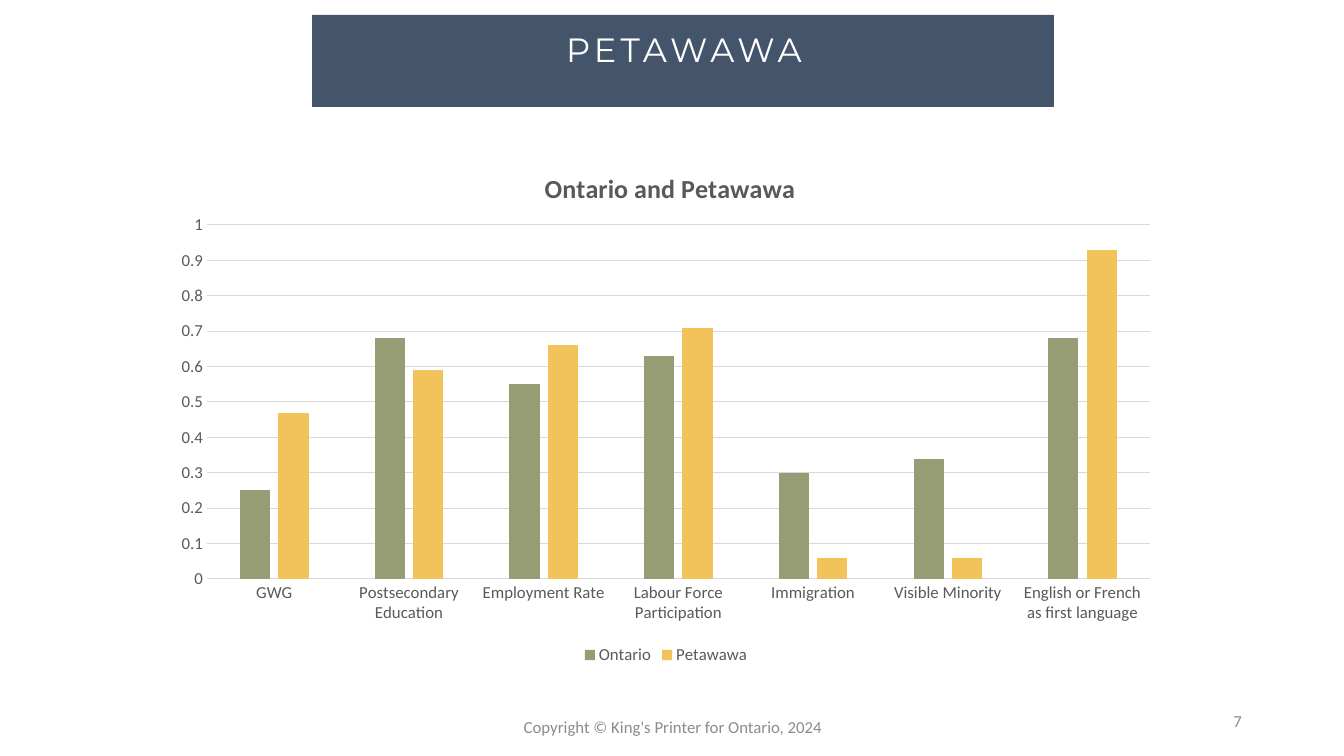
import pptx
import pptx.util
import pptx.chart.data
import pptx.dml.color
import pptx.enum.chart
import pptx.enum.shapes
import pptx.enum.text
import pptx.oxml

COLORS = {
    "banner": "44546A",
    "white": "FFFFFF",
    "footer": "8C8C8C",
    "label": "595959",
    "grid": "D9D9D9",
    "ontario": "969C74",
    "petawawa": "F3C35B",
}
ALIGN = pptx.enum.text.PP_ALIGN
ANCHOR = pptx.enum.text.MSO_ANCHOR


def px(*lengths):
    return [round(length * 914400 / 100.8) for length in lengths]


def style_font(font, size, color, name="Calibri", bold=False):
    font.size = pptx.util.Pt(size)
    font.name = name
    font.bold = bold
    font.color.rgb = pptx.dml.color.RGBColor.from_string(COLORS[color])


deck = pptx.Presentation()
deck.slide_width, deck.slide_height = px(1344, 756)
page = deck.slides.add_slide(deck.slide_layouts[6])

banner = page.shapes.add_shape(
    pptx.enum.shapes.MSO_SHAPE.RECTANGLE, *px(312, 15, 742, 92))
banner.shadow.inherit = False
banner.fill.solid()
banner.fill.fore_color.rgb = pptx.dml.color.RGBColor.from_string(COLORS["banner"])
banner.line.fill.background()

texts = [
    ("PETAWAWA", (339, 29, 690, 40), 24, "white", "Montserrat", ALIGN.CENTER, ANCHOR.TOP, 0, 300),
    ("Copyright © King's Printer for Ontario, 2024", (446, 707, 454, 40), 12, "footer",
     "Calibri", ALIGN.CENTER, ANCHOR.MIDDLE, 10, 0),
    ("7", (950, 701, 302, 40), 12, "footer", "Calibri", ALIGN.RIGHT, ANCHOR.MIDDLE, 10, 0),
]
for text, place, size, color, font_name, align, anchor, inset, spacing in texts:
    frame = page.shapes.add_textbox(*px(*place)).text_frame
    frame.word_wrap = True
    frame.vertical_anchor = anchor
    frame.margin_left, frame.margin_right = px(inset, inset)
    frame.margin_top, frame.margin_bottom = px(inset // 2, inset // 2)
    para = frame.paragraphs[0]
    para.alignment = align
    span = para.add_run()
    span.text = text
    style_font(span.font, size, color, font_name)
    if spacing:
        span.font._element.set("spc", str(spacing))

data = pptx.chart.data.CategoryChartData()
data.categories = [
    "GWG", "Postsecondary Education", "Employment Rate", "Labour Force Participation",
    "Immigration", "Visible Minority", "English or French as first language",
]
data.add_series("Ontario", (0.25, 0.68, 0.55, 0.63, 0.3, 0.34, 0.68))
data.add_series("Petawawa", (0.47, 0.59, 0.66, 0.71, 0.06, 0.06, 0.93))
chart_left, chart_top, chart_width, chart_height = 162, 140, 1008, 529
chart = page.shapes.add_chart(
    pptx.enum.chart.XL_CHART_TYPE.COLUMN_CLUSTERED,
    *px(chart_left, chart_top, chart_width, chart_height), data).chart
chart.font.name = "Calibri"
chart.font.size = pptx.util.Pt(10)

chart.has_title = True
span = chart.chart_title.text_frame.paragraphs[0].add_run()
span.text = "Ontario and Petawawa"
style_font(span.font, 18.6, "label", bold=True)
chart.chart_title.include_in_layout = False

chart.has_legend = True
chart.legend.position = pptx.enum.chart.XL_LEGEND_POSITION.BOTTOM
chart.legend.include_in_layout = False
style_font(chart.legend.font, 12, "label")

plot = chart.plots[0]
plot.gap_width = 219
plot.overlap = -27
plot.vary_by_categories = False
for series, color in zip(plot.series, ("ontario", "petawawa")):
    series.format.fill.solid()
    series.format.fill.fore_color.rgb = pptx.dml.color.RGBColor.from_string(COLORS[color])

values = chart.value_axis
values.minimum_scale, values.maximum_scale, values.major_unit = 0, 1, 0.1
values.has_major_gridlines = True
values.tick_labels.number_format = "General"
values.tick_labels.number_format_is_linked = False
for axis in (chart.category_axis, values):
    axis.major_tick_mark = pptx.enum.chart.XL_TICK_MARK.NONE
    axis.minor_tick_mark = pptx.enum.chart.XL_TICK_MARK.NONE
    style_font(axis.tick_labels.font, 12, "label")
values.format.line.fill.background()
for line in (chart.category_axis.format.line, values.major_gridlines.format.line):
    line.width = pptx.util.Pt(0.75)
    line.color.rgb = pptx.dml.color.RGBColor.from_string(COLORS["grid"])

title_element = chart.chart_title._element
plot_area = chart._chartSpace.chart.plotArea
layouts = [
    (title_element, 1, "", (("x", (540 - chart_left) / chart_width),
                            ("y", (165 - chart_top) / chart_height))),
    (plot_area, 0, '<c:layoutTarget val="inner"/>',
     (("x", (207 - chart_left) / chart_width), ("y", (225 - chart_top) / chart_height),
      ("w", 943 / chart_width), ("h", 354 / chart_height))),
]
for parent, index, target, fractions in layouts:
    for old in parent.findall(pptx.oxml.ns.qn("c:layout")):
        parent.remove(old)
    modes = "".join(f'<c:{key}Mode val="edge"/>' for key, _ in fractions[:2])
    sizes = "".join(f'<c:{key} val="{value:.4f}"/>' for key, value in fractions)
    parent.insert(index, pptx.oxml.parse_xml(
        f'<c:layout {pptx.oxml.ns.nsdecls("c")}><c:manualLayout>'
        f'{target}{modes}{sizes}</c:manualLayout></c:layout>'))

deck.save("out.pptx")
